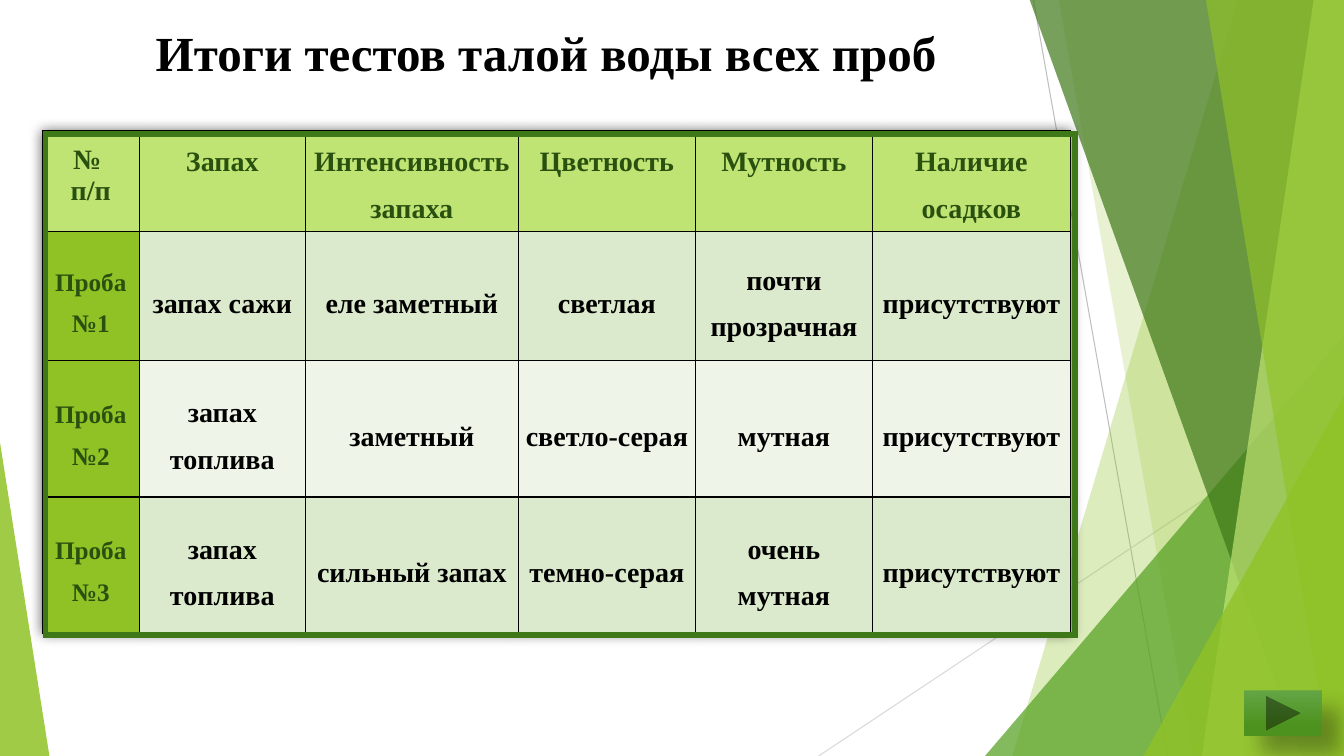
from lxml import etree
from pptx import Presentation
from pptx.dml.color import RGBColor
from pptx.enum import shapes, text
from pptx.oxml import ns
from pptx.util import Inches, Pt

FONT = "Times New Roman"
WIDE, HIGH = 13.33, 7.5
TITLE = "Итоги тестов талой воды всех проб"
ROWS = [
    ["№ \nп/п", "Запах", "Интенсивность запаха", "Цветность", "Мутность",
     "Наличие\nосадков"],
    ["Проба №1", "запах сажи", "еле заметный", "светлая",
     "почти прозрачная", "присутствуют"],
    ["Проба №2", "запах топлива", "заметный", "светло-серая",
     "мутная", "присутствуют"],
    ["Проба №3", "запах топлива", "сильный запах", "темно-серая",
     "очень мутная", "присутствуют"],
]
COLS = [0.96, 1.65, 2.11, 1.76, 1.75, 1.97]
HEIGHTS = [0.96, 1.28, 1.35, 1.35]
BANDS = ["EEF4E8", "DBE9CD"]
DARK, BLACK = "2A5010", "000000"

# Background: thin lines, then panels and triangles from back to front
LINES = [((10.25, 0), (11.58, 7.5), "BFBFBF"),
         ((13.33, 4.03), (8.12, 7.5), "D9D9D9")]
# panel: top x, bottom x; triangle: left, top, width, tip; then colour, opacity
DECOR = [
    ((12.28, 10.04), "90C226", 30),
    ((10.5, 11.83), "90C226", 20),
    ((9.77, 3.33, 3.56, 1), "54A021", 72),
    ((10.21, 12.91), "3F7819", 70),
    ((13.03, 11.92), "C0E474", 70),
    ((11.96, 13.18), "90C226", 65),
    ((11.34, 3.93, 1.99, 1), "90C226", 80),
    ((0, 4.39, 0.49, 0), "90C226", 85),
]

prs = Presentation()
prs.slide_width, prs.slide_height = Inches(WIDE), Inches(HIGH)
slide = prs.slides.add_slide(prs.slide_layouts[6])
tree = slide.shapes


def rgb(code):
    return RGBColor.from_string(code)


def sub(node, tag, **attrs):
    return etree.SubElement(node, ns.qn("a:" + tag),
                            {k: str(v) for k, v in attrs.items()})


def paint(shape, code, alpha):
    shape.shadow.inherit = False
    shape.line.fill.background()
    shape.fill.solid()
    shape.fill.fore_color.rgb = rgb(code)
    for clr in shape.fill._xPr.iter(ns.qn("a:srgbClr")):
        sub(clr, "alpha", val=alpha * 1000)


def shade(node, blur, dist, angle, alpha):
    cast = sub(node, "outerShdw", blurRad=Pt(blur), dist=Pt(dist),
               dir=angle * 60000, algn="ctr", rotWithShape=0)
    sub(sub(cast, "srgbClr", val=BLACK), "alpha", val=alpha * 1000)


def write(frame, words, size, code, gap=1.0):
    for i, line in enumerate(words.split("\n")):
        para = frame.paragraphs[0] if i == 0 else frame.add_paragraph()
        para.alignment = text.PP_ALIGN.CENTER
        para.line_spacing = gap
        run = para.add_run()
        run.text = line
        run.font.name, run.font.size, run.font.bold = FONT, Pt(size), True
        run.font.color.rgb = rgb(code)


def edge(cell, code, width):
    props = cell._tc.get_or_add_tcPr()
    for i, side in enumerate(("lnL", "lnR", "lnT", "lnB")):
        line = sub(props, side, w=Pt(width))
        sub(sub(line, "solidFill"), "srgbClr", val=code)
        props.insert(i, line)


def grid(left, top, cols, rows):
    box = tree.add_table(len(rows), len(cols), Inches(left), Inches(top),
                         Inches(sum(cols)), Inches(sum(rows)))
    table = box.table
    table.first_row = table.horz_banding = False
    for col, size in zip(table.columns, cols):
        col.width = Inches(size)
    for row, size in zip(table.rows, rows):
        row.height = Inches(size)
    return table


# Background
for start, end, code in LINES:
    line = tree.add_connector(shapes.MSO_CONNECTOR.STRAIGHT,
                              *map(Inches, start + end))
    line.line.color.rgb, line.line.width = rgb(code), Pt(0.75)
    sub(line._element.spPr, "effectLst")

for place, code, alpha in DECOR:
    if len(place) == 2:
        head, foot = place
        pen = tree.build_freeform(Inches(head), Inches(-0.01))
        pen.add_line_segments([(Inches(x), Inches(y)) for x, y in
                               ((WIDE, -0.01), (WIDE, HIGH), (foot, HIGH))])
        part = pen.convert_to_shape()
    else:
        left, top, width, tip = place
        part = tree.add_shape(shapes.MSO_SHAPE.ISOSCELES_TRIANGLE,
                              *map(Inches, (left, top, width, HIGH - top)))
        part.adjustments[0] = tip
    paint(part, code, alpha)

# Title
title = tree.add_textbox(*map(Inches, (-0.1, 0.17, 11.04, 0.69))).text_frame
title.word_wrap = True
write(title, TITLE, 35, BLACK)

# Results table
table = grid(0.42, 1.3, COLS, HEIGHTS)
props = table._tbl.tblPr
glow = sub(props, "effectLst")
props.insert(0, glow)
shade(glow, 9, 0, 0, 60)
for r, row in enumerate(ROWS):
    for c, words in enumerate(row):
        cell = table.cell(r, c)
        corner = r == c == 0
        cell.margin_left = cell.margin_right = Inches(0.07)
        cell.margin_top = Inches(0.13 if corner else 0)
        cell.margin_bottom = 0
        if r:
            cell.vertical_anchor = text.MSO_ANCHOR.MIDDLE
        cell.fill.solid()
        cell.fill.fore_color.rgb = rgb(
            "C0E474" if r == 0 else "90C226" if c == 0 else BANDS[r % 2])
        write(cell.text_frame, words, 18 if r and c == 0 else 20,
              BLACK if r and c else DARK, 1.0 if corner else 1.5)
        edge(cell, BLACK, 1)

# Forward button
button = tree.add_shape(shapes.MSO_SHAPE.ACTION_BUTTON_FORWARD_OR_NEXT,
                        *map(Inches, (12.34, 6.85, 0.77, 0.45)))
button.line.fill.background()
button.fill.gradient()
button.fill.gradient_angle = 270
for stop, (spot, code) in zip(button.fill.gradient_stops,
                              ((0, "63A545"), (0.78, "4D921E"))):
    stop.position, stop.color.rgb = spot, rgb(code)
button.shadow.inherit = False
shade(button._element.spPr.find(ns.qn("a:effectLst")), 15, 18, 45, 30)

# Thick frame around the table
frame = grid(0.45, 1.33, [10.21], [4.97]).cell(0, 0)
frame.fill.background()
edge(frame, "3F7819", 4.5)

prs.save("out.pptx")
